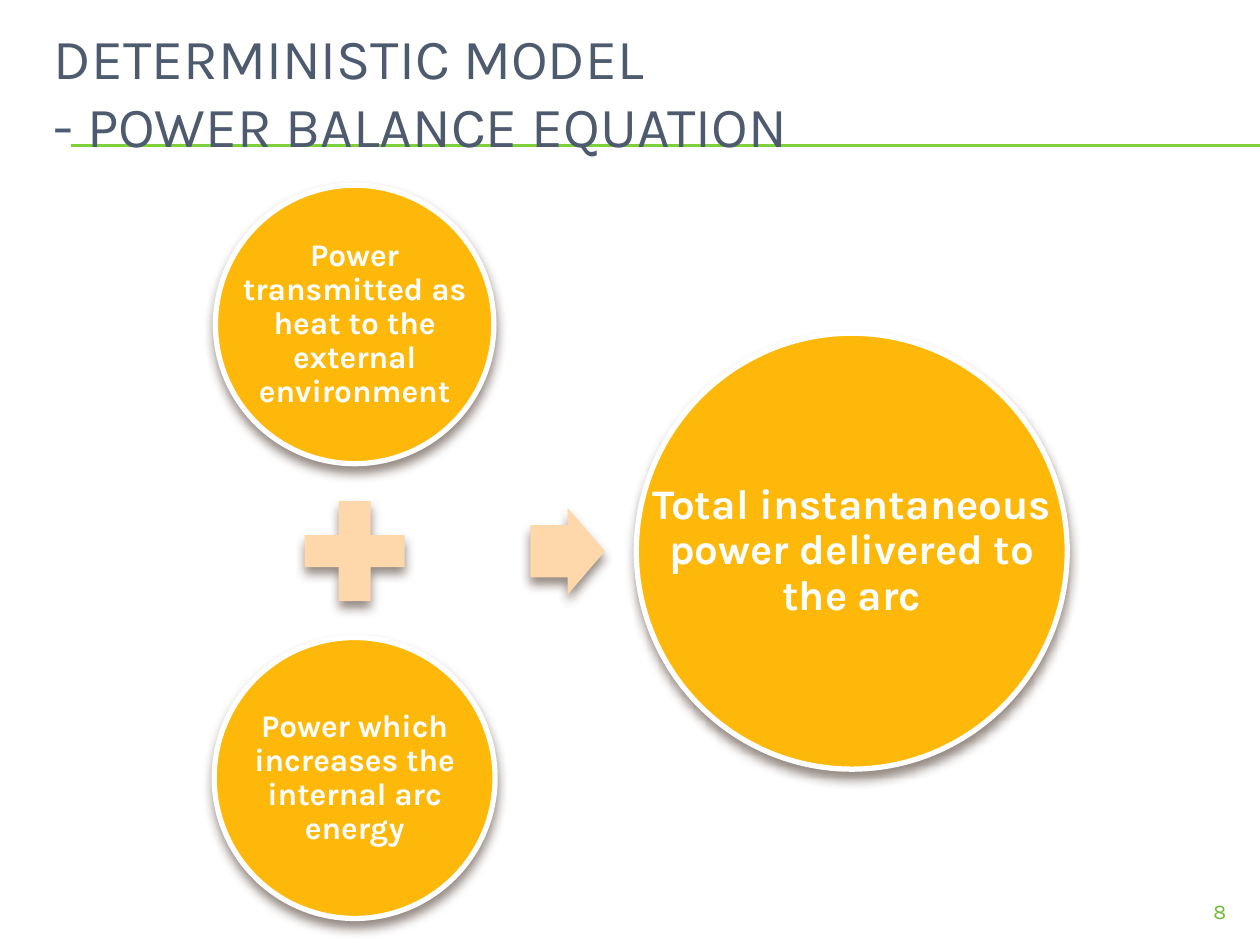
from dataclasses import dataclass

from lxml import etree
from pptx import Presentation
from pptx.dml.color import RGBColor
from pptx.enum.shapes import MSO_CONNECTOR, MSO_SHAPE
from pptx.enum.text import MSO_ANCHOR, PP_ALIGN
from pptx.oxml.ns import qn
from pptx.util import Inches, Pt

ELLIPSE, PLUS, ARROW = MSO_SHAPE.OVAL, MSO_SHAPE.MATH_PLUS, MSO_SHAPE.RIGHT_ARROW
STRAIGHT = MSO_CONNECTOR.STRAIGHT
LEFT, CENTER, RIGHT = PP_ALIGN.LEFT, PP_ALIGN.CENTER, PP_ALIGN.RIGHT
TOP, MIDDLE = MSO_ANCHOR.TOP, MSO_ANCHOR.MIDDLE
COLUMNS, ROWS = 100, 75


@dataclass(frozen=True)
class Theme:
    font: str = "Karla"
    title: str = "4E5B6F"
    rule: str = "7FD13B"
    number: str = "70B834"
    circle: str = "FEB80A"
    operator: str = "FED8AB"
    white: str = "FFFFFF"
    shadow: str = "4E3B30"
    title_size: float = 32.4
    total_size: float = 24
    part_size: float = 18
    number_size: float = 12


class Deck:
    def __init__(self, theme):
        self.theme = theme
        self.prs = Presentation()
        self.prs.slide_width, self.prs.slide_height = Inches(10), Inches(7.5)
        self.s = self.prs.slides.add_slide(self.prs.slide_layouts[6])

    def x(self, columns):
        return round(self.prs.slide_width * columns / COLUMNS)

    def y(self, rows):
        return round(self.prs.slide_height * rows / ROWS)

    def box(self, cx, cy, w, h):
        return self.x(cx - w / 2), self.y(cy - h / 2), self.x(w), self.y(h)

    def rule(self, left, right, row):
        line = self.s.shapes.add_connector(
            STRAIGHT, self.x(left), self.y(row), self.x(right), self.y(row))
        line.line.color.rgb = RGBColor.from_string(self.theme.rule)
        line.line.width = Pt(0.75)
        etree.SubElement(line._element.spPr, qn("a:effectLst"))

    def text(self, text, box, size, color, align=LEFT, anchor=TOP,
             bold=False, inset=None, spacing=None):
        tf = self.s.shapes.add_textbox(*box).text_frame
        tf.word_wrap = True
        tf.vertical_anchor = anchor
        if inset is not None:
            tf.margin_left = tf.margin_right = self.x(inset)
            tf.margin_top = tf.margin_bottom = self.y(inset)
        tf.text = text
        p = tf.paragraphs[0]
        p.alignment = align
        p.line_spacing = spacing
        for r in p.runs:
            r.font.name = self.theme.font
            r.font.size = Pt(size)
            r.font.bold = bold
            r.font.color.rgb = RGBColor.from_string(color)

    def shape(self, kind, box, fill):
        sp = self.s.shapes.add_shape(kind, *box)
        sp.fill.solid()
        sp.fill.fore_color.rgb = RGBColor.from_string(fill)
        sp.line.fill.background()
        self.cast_shadow(sp)
        return sp

    def cast_shadow(self, sp):
        sp.shadow.inherit = False
        effects = sp._element.spPr.find(qn("a:effectLst"))
        shadow = etree.SubElement(
            effects, qn("a:outerShdw"), blurRad=str(Pt(6)), dist=str(Pt(4)),
            dir="5400000", rotWithShape="0")
        color = etree.SubElement(shadow, qn("a:srgbClr"), val=self.theme.shadow)
        etree.SubElement(color, qn("a:alpha"), val="60000")

    def circle(self, text, cx, cy, w, h, size):
        box = self.box(cx, cy, w, h)
        sp = self.shape(ELLIPSE, box, self.theme.circle)
        sp.line.color.rgb = RGBColor.from_string(self.theme.white)
        sp.line.width = Pt(3)
        self.text(text, box, size, self.theme.white, CENTER, MIDDLE,
                  bold=True, inset=0.3, spacing=0.9)

    def operator(self, kind, cx, cy, w, h):
        return self.shape(kind, self.box(cx, cy, w, h), self.theme.operator)


def main():
    theme = Theme()
    deck = Deck(theme)
    for row in (11.5, 11.6):
        deck.rule(5.6, COLUMNS, row)
    deck.text("DETERMINISTIC MODEL \v- POWER BALANCE EQUATION",
              deck.box(50.8, 7.2, 95, 9.2), theme.title_size, theme.title,
              anchor=MIDDLE)

    parts_x, middle_y, offset = 28.15, 43.75, 18
    deck.circle("Power transmitted as heat to the external environment",
                parts_x, middle_y - offset, 22.1, 22.1, theme.part_size)
    deck.operator(PLUS, parts_x, middle_y, 10.8, 10.8)
    deck.circle("Power which increases the internal arc energy",
                parts_x, middle_y + offset, 22.3, 22.3, theme.part_size)
    arrow = deck.operator(ARROW, 45.05, middle_y, 5.9, 6.9)
    arrow.adjustments[0] = 0.6
    arrow.adjustments[1] = 0.5
    deck.circle("Total instantaneous power delivered to the arc",
                67.6, middle_y, 34.2, 34.6, theme.total_size)

    deck.text("8", deck.box(94.15, 72.15, 8.3, 2.7), theme.number_size,
              theme.number, RIGHT)
    deck.prs.save("out.pptx")


if __name__ == "__main__":
    main()
